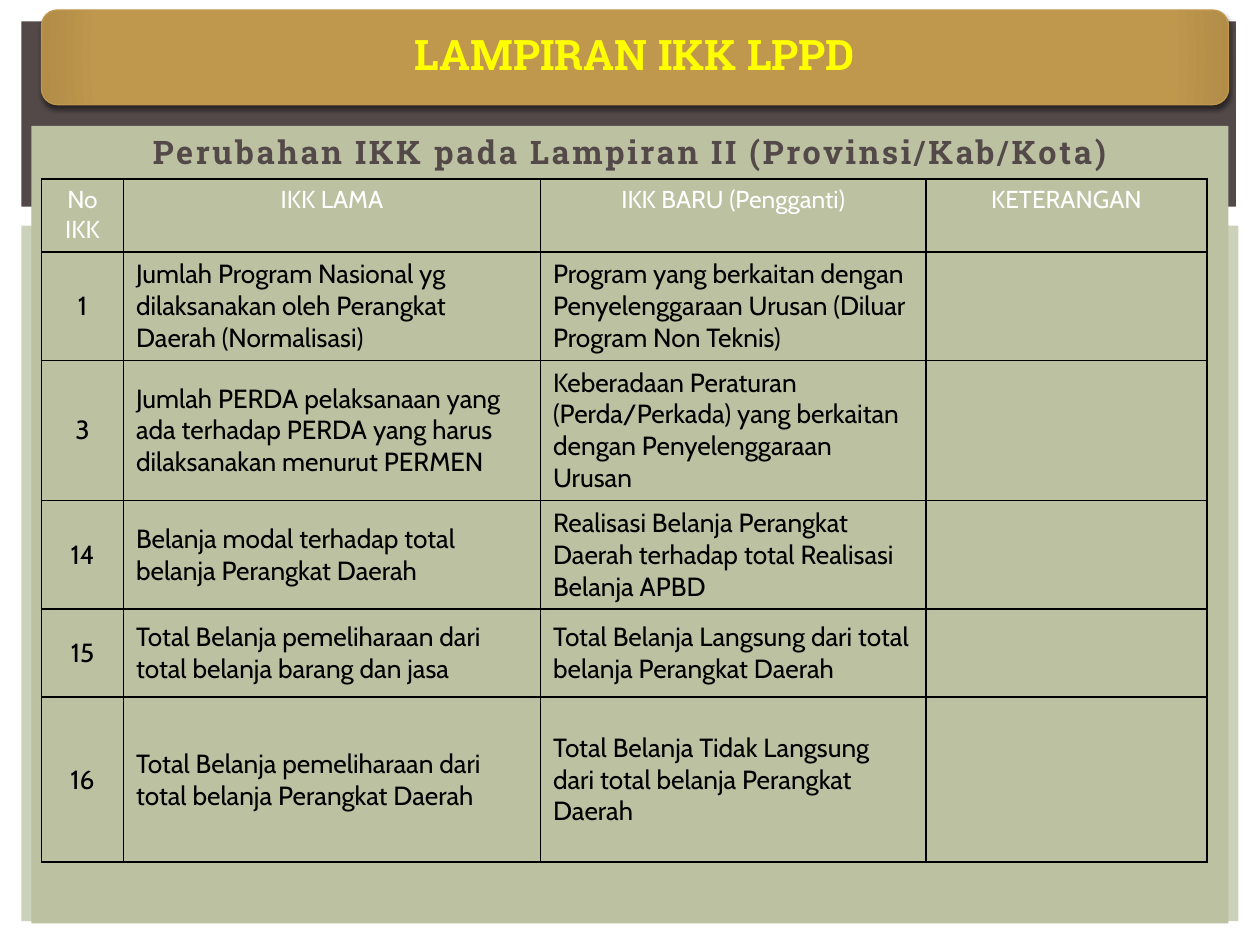
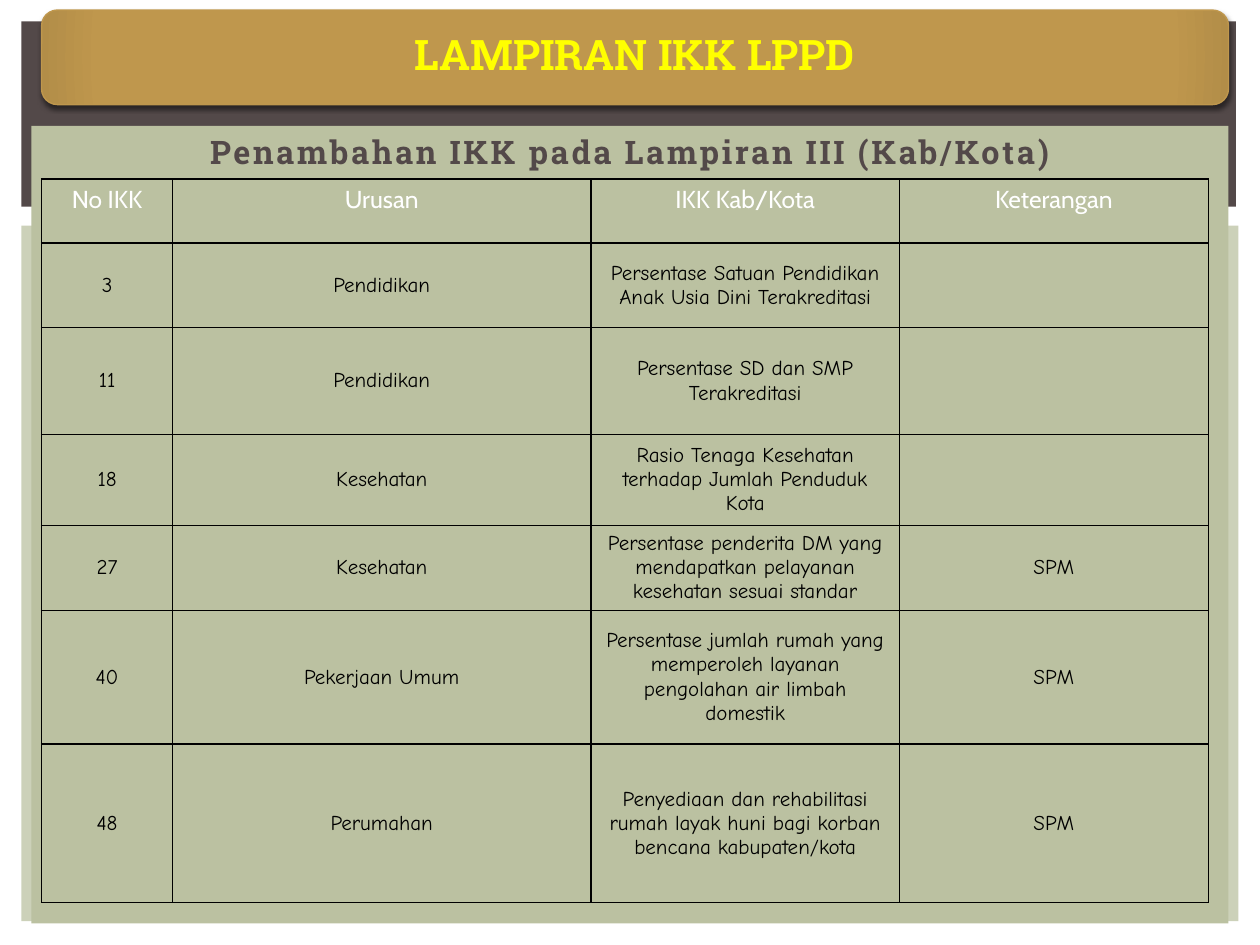
from dataclasses import dataclass

from lxml.etree import SubElement
from pptx import Presentation
from pptx.dml.color import RGBColor
from pptx.enum.shapes import MSO_SHAPE
from pptx.enum.text import MSO_ANCHOR, PP_ALIGN
from pptx.oxml import parse_xml
from pptx.oxml.ns import nsdecls, qn
from pptx.util import Inches, Pt

# Shared colours and fonts
WHITE, BLACK, YELLOW = "FFFFFF", "000000", "FFFF00"
BROWN, SAGE, PALE_SAGE = "534949", "BBC1A1", "CCD1B9"
GOLD, DARK_GOLD = "BF974D", "B28D48"
HEADING_FONT, TABLE_FONT, HAND_FONT = "Roboto Slab", "Cabin", "Comic Neue"

DECK_TITLE = "LAMPIRAN IKK LPPD"
TABLE_LEFT, TABLE_TOP = 0.33, 1.42


@dataclass(frozen=True)
class Panel:
    left: float
    top: float
    width: float
    height: float
    color: str
    kind: MSO_SHAPE = MSO_SHAPE.RECTANGLE


@dataclass(frozen=True)
class TextStyle:
    font: str
    size: float
    color: str
    bold: bool = False
    spacing: float = 0
    alignment: PP_ALIGN = PP_ALIGN.CENTER


@dataclass(frozen=True)
class IndicatorSlide:
    subtitle: str
    widths: list[float]
    heights: list[float]
    rows: list[list[str]]
    body_style: TextStyle
    middle_alignment: PP_ALIGN


BACKDROPS = [
    Panel(0.17, 1.79, 9.66, 5.52, PALE_SAGE),
    Panel(0.17, 0.17, 9.64, 1.47, BROWN),
]
CONTENT_PANEL = Panel(0.25, 1, 9.5, 6.33, SAGE)
TITLE_BAND = Panel(0.33, 0.08, 9.42, 0.75, GOLD, MSO_SHAPE.ROUNDED_RECTANGLE)

TITLE_STYLE = TextStyle(HEADING_FONT, 24, YELLOW, bold=True)
SUBTITLE_STYLE = TextStyle(HEADING_FONT, 18.5, BROWN, bold=True, spacing=1.5)
HEADER_STYLE = TextStyle(TABLE_FONT, 14, WHITE)

INDICATOR_SLIDES = [
    IndicatorSlide(
        "Perubahan IKK pada Lampiran II (Provinsi/Kab/Kota)",
        [0.65, 3.31, 3.06, 2.23],
        [0.58, 0.86, 1.11, 0.86, 0.7, 1.31],
        [
            ["No IKK", "IKK LAMA", "IKK BARU (Pengganti)", "KETERANGAN"],
            ["1", "Jumlah Program Nasional yg dilaksanakan oleh Perangkat Daerah (Normalisasi)",
             "Program yang berkaitan dengan Penyelenggaraan Urusan (Diluar Program Non Teknis)", ""],
            ["3", "Jumlah PERDA pelaksanaan yang ada terhadap PERDA yang harus dilaksanakan menurut PERMEN",
             "Keberadaan Peraturan (Perda/Perkada) yang berkaitan dengan Penyelenggaraan Urusan", ""],
            ["14", "Belanja modal terhadap total belanja Perangkat Daerah",
             "Realisasi Belanja Perangkat Daerah terhadap total Realisasi Belanja APBD", ""],
            ["15", "Total Belanja pemeliharaan dari total belanja barang dan jasa",
             "Total Belanja Langsung dari total belanja Perangkat Daerah", ""],
            ["16", "Total Belanja pemeliharaan dari total belanja Perangkat Daerah",
             "Total Belanja Tidak Langsung dari total belanja Perangkat Daerah", ""],
        ],
        TextStyle(TABLE_FONT, 15, BLACK),
        PP_ALIGN.LEFT,
    ),
    IndicatorSlide(
        "Penambahan IKK pada Lampiran III (Kab/Kota)",
        [1.04, 3.32, 2.45, 2.45],
        [0.51, 0.67, 0.85, 0.72, 0.67, 1.06, 1.26],
        [
            ["No IKK", "Urusan", "IKK Kab/Kota", "Keterangan"],
            ["3", "Pendidikan", "Persentase Satuan Pendidikan Anak Usia Dini Terakreditasi", ""],
            ["11", "Pendidikan", "Persentase SD dan SMP Terakreditasi", ""],
            ["18", "Kesehatan", "Rasio Tenaga Kesehatan terhadap Jumlah Penduduk Kota", ""],
            ["27", "Kesehatan",
             "Persentase penderita DM yang mendapatkan pelayanan kesehatan sesuai standar", "SPM"],
            ["40", "Pekerjaan Umum",
             "Persentase jumlah rumah yang memperoleh layanan pengolahan air limbah domestik", "SPM"],
            ["48", "Perumahan",
             "Penyediaan dan rehabilitasi rumah layak huni bagi korban bencana kabupaten/kota", "SPM"],
        ],
        TextStyle(HAND_FONT, 12, BLACK),
        PP_ALIGN.CENTER,
    ),
]


def rgb(color: str) -> RGBColor:
    return RGBColor.from_string(color)


def write_text(text_frame, text: str, style: TextStyle, alignment: PP_ALIGN | None = None):
    paragraph = text_frame.paragraphs[0]
    paragraph.alignment = style.alignment if alignment is None else alignment
    run = paragraph.add_run()
    run.text = text
    run.font.name = style.font
    run.font.size = Pt(style.size)
    run.font.bold = style.bold
    run.font.color.rgb = rgb(style.color)
    if style.spacing:
        run.font._element.set("spc", str(int(style.spacing * 100)))
    return paragraph


def add_panel(slide, panel: Panel):
    shape = slide.shapes.add_shape(
        panel.kind, Inches(panel.left), Inches(panel.top), Inches(panel.width), Inches(panel.height)
    )
    shape.shadow.inherit = False
    shape.fill.solid()
    shape.fill.fore_color.rgb = rgb(panel.color)
    shape.line.fill.background()
    return shape


def add_title_band(slide) -> None:
    band = add_panel(slide, TITLE_BAND)
    band.line.color.rgb = rgb(GOLD)
    band.line.width = Pt(0.79)

    # Radial gold gradient
    properties = band._element.spPr
    stops = "".join(
        f'<a:gs pos="{position * 1000}"><a:srgbClr val="{color}"/></a:gs>'
        for position, color in [(0, GOLD), (90, GOLD), (100, DARK_GOLD)]
    )
    gradient = parse_xml(
        f'<a:gradFill {nsdecls("a")} rotWithShape="1"><a:gsLst>{stops}</a:gsLst><a:path path="circle">'
        '<a:fillToRect l="100000" t="100000" r="100000" b="100000"/></a:path></a:gradFill>'
    )
    properties.replace(properties.find(qn("a:solidFill")), gradient)

    # Soft shadow below the band
    shadow = SubElement(
        properties.find(qn("a:effectLst")), qn("a:outerShdw"),
        blurRad=str(Pt(2.5)), dist=str(Pt(2)), dir="5400000", rotWithShape="0",
    )
    shadow_color = SubElement(shadow, qn("a:srgbClr"), val=BLACK)
    SubElement(shadow_color, qn("a:alpha"), val="50000")

    text_frame = band.text_frame
    text_frame.word_wrap = True
    text_frame.vertical_anchor = MSO_ANCHOR.MIDDLE
    text_frame.margin_left = text_frame.margin_right = Inches(0.05)
    text_frame.margin_top = text_frame.margin_bottom = 0
    write_text(text_frame, DECK_TITLE, TITLE_STYLE).line_spacing = 0.9


def add_content_panel(slide, subtitle: str) -> None:
    text_frame = add_panel(slide, CONTENT_PANEL).text_frame
    text_frame.word_wrap = True
    text_frame.vertical_anchor = MSO_ANCHOR.TOP
    write_text(text_frame, subtitle, SUBTITLE_STYLE)


def outline_cell(cell) -> None:
    cell_properties = cell._tc.get_or_add_tcPr()
    for side in ("lnL", "lnR", "lnT", "lnB"):
        border = SubElement(cell_properties, qn(f"a:{side}"), w=str(Pt(1)))
        fill = SubElement(border, qn("a:solidFill"))
        SubElement(fill, qn("a:srgbClr"), val=BLACK)


def add_indicator_table(slide, content: IndicatorSlide) -> None:
    table = slide.shapes.add_table(
        len(content.rows), len(content.widths), Inches(TABLE_LEFT), Inches(TABLE_TOP),
        Inches(sum(content.widths)), Inches(sum(content.heights)),
    ).table
    table.first_row = table.horz_banding = False
    for column, width in zip(table.columns, content.widths):
        column.width = Inches(width)
    for row, height in zip(table.rows, content.heights):
        row.height = Inches(height)

    for row_index, texts in enumerate(content.rows):
        is_header = row_index == 0
        style = HEADER_STYLE if is_header else content.body_style
        for column_index, text in enumerate(texts):
            cell = table.cell(row_index, column_index)
            outline_cell(cell)
            cell.fill.background()
            cell.vertical_anchor = MSO_ANCHOR.TOP if is_header else MSO_ANCHOR.MIDDLE
            if text:
                in_middle = not is_header and column_index in (1, 2)
                write_text(cell.text_frame, text, style, content.middle_alignment if in_middle else None)


def main() -> None:
    presentation = Presentation()
    presentation.slide_width = Inches(10)
    presentation.slide_height = Inches(7.5)
    for content in INDICATOR_SLIDES:
        slide = presentation.slides.add_slide(presentation.slide_layouts[6])
        for backdrop in BACKDROPS:
            add_panel(slide, backdrop)
        add_content_panel(slide, content.subtitle)
        add_title_band(slide)
        add_indicator_table(slide, content)
    presentation.save("out.pptx")


if __name__ == "__main__":
    main()
